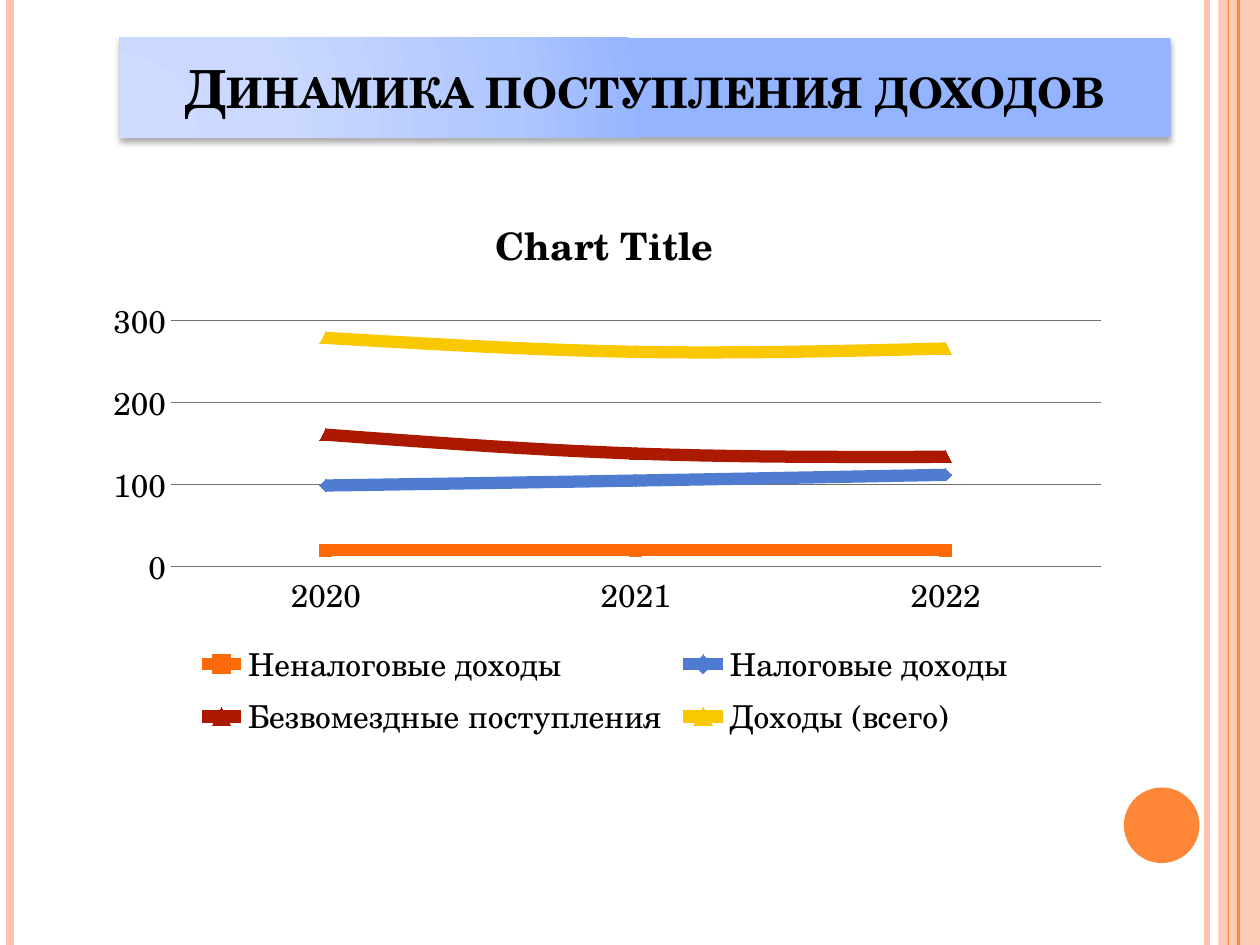
from lxml.etree import SubElement
from pptx import Presentation
from pptx.chart.data import CategoryChartData
from pptx.dml.color import RGBColor
from pptx.enum.chart import XL_CHART_TYPE, XL_LEGEND_POSITION, XL_MARKER_STYLE, XL_TICK_MARK
from pptx.enum.shapes import MSO_CONNECTOR, MSO_SHAPE
from pptx.enum.text import MSO_ANCHOR, MSO_AUTO_SIZE, PP_ALIGN
from pptx.oxml import parse_xml
from pptx.oxml.ns import nsdecls, qn
from pptx.util import Inches, Pt

FONT = "TeX Gyre Schola"
BLACK = RGBColor(0x00, 0x00, 0x00)
GRAY = RGBColor(0x70, 0x70, 0x70)
PEACH = RGBColor(0xFE, 0xC3, 0xAE)
ORANGE = RGBColor(0xFE, 0x86, 0x37)

TITLE = "Динамика поступления доходов"
CHART_TITLE = "Chart Title"
YEARS = ["2020", "2021", "2022"]
SERIES = [
    ("Неналоговые доходы", (20, 20, 20), RGBColor(0xFF, 0x6A, 0x08), XL_MARKER_STYLE.SQUARE),
    ("Налоговые доходы", (99, 105, 112), RGBColor(0x4F, 0x7C, 0xD1), XL_MARKER_STYLE.DIAMOND),
    ("Безвомездные поступления", (161, 138, 134), RGBColor(0xAB, 0x19, 0x00), XL_MARKER_STYLE.TRIANGLE),
    ("Доходы (всего)", (279, 262, 266), RGBColor(0xF9, 0xC8, 0x00), XL_MARKER_STYLE.TRIANGLE),
]
STRIPES = [(9.58, PEACH, 3), (0.08, PEACH, 4.5), (9.83, ORANGE, 1.5), (9.75, ORANGE, 0.75)]
GRADIENT = [(0, "CFDCFF"), (30, "CBD9FF"), (75, "AFC6FF"), (100, "95B4FF")]
PLOT_LAYOUT = {"x": 0.08, "y": 0.24, "w": 0.9, "h": 0.44}


def add_plain(s, kind, box, color):
    sp = s.shapes.add_shape(kind, *map(Inches, box))
    sp.shadow.inherit = False
    sp.fill.solid()
    sp.fill.fore_color.rgb = color
    sp.line.fill.background()
    return sp


def add_decor(s):
    band = add_plain(s, MSO_SHAPE.RECTANGLE, (9.67, 0, 0.33, 7.5), PEACH)
    clr = band._element.spPr.find(qn("a:solidFill"))[0]
    SubElement(clr, qn("a:alpha"), val="87000")
    for x, color, width in STRIPES:
        line = s.shapes.add_connector(
            MSO_CONNECTOR.STRAIGHT, Inches(x), 0, Inches(x), Inches(7.5))
        line.line.color.rgb = color
        line.line.width = Pt(width)
        SubElement(line._element.spPr, qn("a:effectLst"))
    add_plain(s, MSO_SHAPE.OVAL, (8.92, 6.25, 0.6, 0.6), ORANGE)


def format_title(s):
    sp = s.shapes.title
    sp.left, sp.top, sp.width, sp.height = map(Inches, (0.95, 0.3, 8.34, 0.79))
    stops = "".join(
        f'<a:gs pos="{pos * 1000}"><a:srgbClr val="{color}"/></a:gs>' for pos, color in GRADIENT)
    spPr = sp._element.spPr
    spPr.append(parse_xml(f'<a:prstGeom {nsdecls("a")} prst="rect"><a:avLst/></a:prstGeom>'))
    spPr.append(parse_xml(
        f'<a:gradFill {nsdecls("a")}><a:gsLst>{stops}</a:gsLst><a:path path="circle">'
        '<a:fillToRect l="5000" t="100000" r="120000" b="10000"/></a:path></a:gradFill>'))
    spPr.append(parse_xml(
        f'<a:effectLst {nsdecls("a")}><a:outerShdw blurRad="{Pt(3.5)}" dist="{Pt(2.2)}" '
        'dir="5400000" rotWithShape="0"><a:srgbClr val="000000"><a:alpha val="32000"/>'
        '</a:srgbClr></a:outerShdw></a:effectLst>'))
    tf = sp.text_frame
    tf.word_wrap = True
    tf.auto_size = MSO_AUTO_SIZE.NONE
    tf.vertical_anchor = MSO_ANCHOR.MIDDLE
    p = tf.paragraphs[0]
    p.alignment = PP_ALIGN.CENTER
    r = p.add_run()
    r.text = TITLE
    r.font.name, r.font.size, r.font.bold = FONT, Pt(30), True
    r.font.color.rgb = BLACK
    r._r.get_or_add_rPr().set("cap", "small")


def add_income_chart(s):
    data = CategoryChartData()
    data.categories = YEARS
    for name, values, _, _ in SERIES:
        data.add_series(name, values)
    chart = s.shapes.add_chart(
        XL_CHART_TYPE.LINE_MARKERS, *map(Inches, (0.7, 1.48, 8.2, 4.44)), data).chart
    chart.font.name, chart.font.size = FONT, Pt(18)
    chart.font.color.rgb = BLACK

    chart.has_title = True
    r = chart.chart_title.text_frame.paragraphs[0].add_run()
    r.text = CHART_TITLE
    r.font.name, r.font.size, r.font.bold = FONT, Pt(21.6), True
    r.font.color.rgb = BLACK
    chart.chart_title.include_in_layout = False

    chart.has_legend = True
    chart.legend.position = XL_LEGEND_POSITION.BOTTOM
    chart.legend.include_in_layout = False

    cat, val = chart.category_axis, chart.value_axis
    for axis in (cat, val):
        axis.major_tick_mark = axis.minor_tick_mark = XL_TICK_MARK.NONE
    cat.format.line.color.rgb = GRAY
    val.format.line.fill.background()
    val.minimum_scale, val.maximum_scale, val.major_unit = 0, 300, 100
    val.has_major_gridlines = True
    val.major_gridlines.format.line.color.rgb = GRAY
    val.major_gridlines.format.line.width = Pt(0.75)

    plot = chart.plots[0]
    plot.vary_by_categories = False
    for series, (_, _, color, style) in zip(plot.series, SERIES):
        series.smooth = True
        series.format.line.color.rgb = color
        series.format.line.width = Pt(7)
        series.marker.style = style
        series.marker.size = 7
        series.marker.format.fill.solid()
        series.marker.format.fill.fore_color.rgb = color
        series.marker.format.line.color.rgb = color

    area = chart._chartSpace.chart.plotArea
    for old in area.findall(qn("c:layout")):
        area.remove(old)
    sizes = "".join(f'<c:{key} val="{value}"/>' for key, value in PLOT_LAYOUT.items())
    area.insert(0, parse_xml(
        f'<c:layout {nsdecls("c")}><c:manualLayout><c:layoutTarget val="inner"/>'
        f'<c:xMode val="edge"/><c:yMode val="edge"/>{sizes}</c:manualLayout></c:layout>'))


def main():
    prs = Presentation()
    prs.slide_width, prs.slide_height = Inches(10), Inches(7.5)
    s = prs.slides.add_slide(prs.slide_layouts[5])
    add_decor(s)
    format_title(s)
    add_income_chart(s)
    prs.save("out.pptx")


if __name__ == "__main__":
    main()
